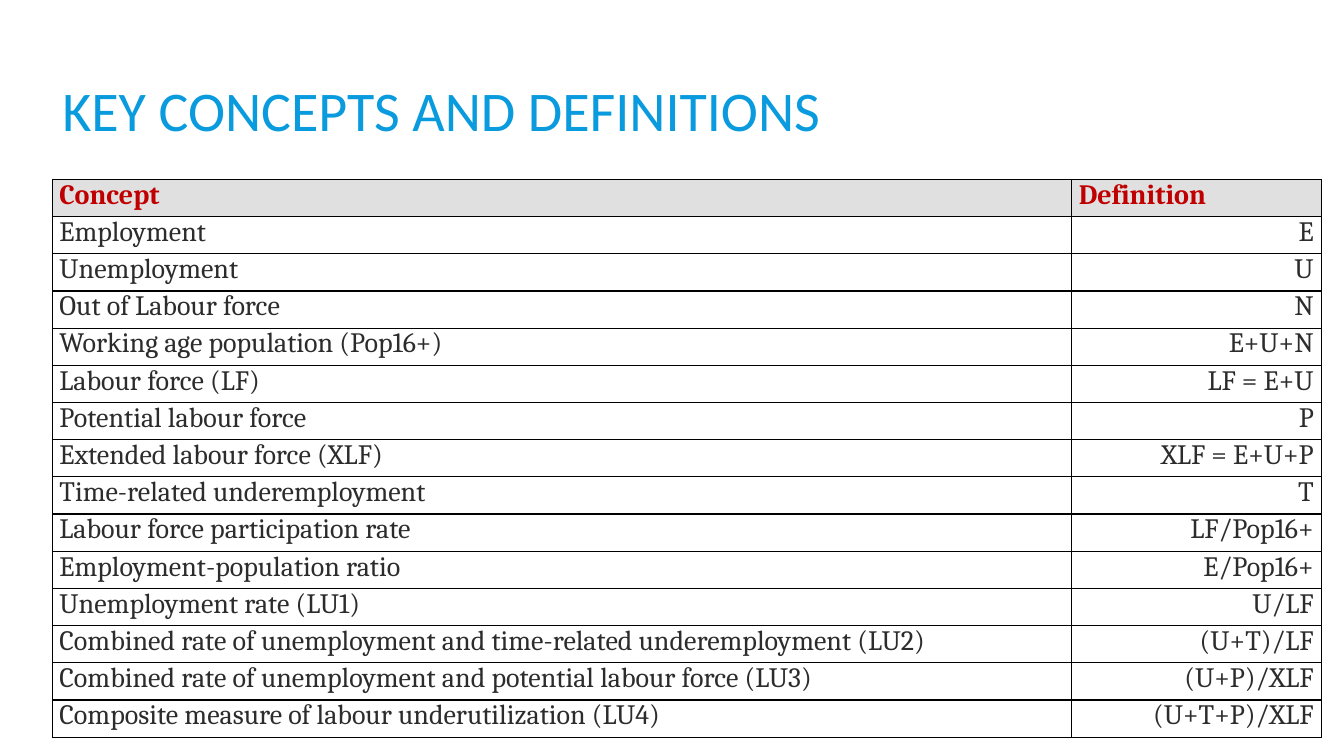
from dataclasses import dataclass

from lxml.etree import SubElement
from pptx import Presentation
from pptx.dml.color import RGBColor
from pptx.enum.text import MSO_ANCHOR, PP_ALIGN
from pptx.oxml.ns import qn
from pptx.util import Inches, Pt


@dataclass(frozen=True)
class Theme:
    heading: str = "099BDD"
    header_text: str = "C00000"
    header_fill: str = "E0E0E0"
    body_text: str = "2C2C2C"
    border: str = "000000"
    heading_font: str = "Calibri"
    table_font: str = "Cambria"
    heading_size: int = 40
    table_size: int = 20
    border_width: int = 1


THEME = Theme()
SLIDE_WIDTH, SLIDE_HEIGHT = Inches(13.33), Inches(7.5)
CONCEPT_SHARE = 0.803

CONCEPTS = [
    ("Concept", "Definition"),
    ("Employment", "E"),
    ("Unemployment", "U"),
    ("Out of Labour force", "N"),
    ("Working age population (Pop16+)", "E+U+N"),
    ("Labour force (LF)", "LF = E+U"),
    ("Potential labour force", "P"),
    ("Extended labour force (XLF)", "XLF = E+U+P"),
    ("Time-related underemployment", "T"),
    ("Labour force participation rate", "LF/Pop16+"),
    ("Employment-population ratio", "E/Pop16+"),
    ("Unemployment rate (LU1)", "U/LF"),
    ("Combined rate of unemployment and time-related underemployment (LU2)", "(U+T)/LF"),
    ("Combined rate of unemployment and potential labour force (LU3)", "(U+P)/XLF"),
    ("Composite measure of labour underutilization (LU4)", "(U+T+P)/XLF"),
]


def percent_box(left, top, width, height):
    return (
        round(SLIDE_WIDTH * left / 100),
        round(SLIDE_HEIGHT * top / 100),
        round(SLIDE_WIDTH * width / 100),
        round(SLIDE_HEIGHT * height / 100),
    )


def write(frame, text, *, font, size, color, bold=False,
          align=PP_ALIGN.LEFT, line_spacing=1.0):
    frame.word_wrap = True
    paragraph = frame.paragraphs[0]
    paragraph.alignment = align
    paragraph.line_spacing = line_spacing
    run = paragraph.add_run()
    run.text = text
    run.font.name = font
    run.font.size = Pt(size)
    run.font.bold = bold
    run.font.color.rgb = RGBColor.from_string(color)


def draw_borders(cell):
    properties = cell._tc.get_or_add_tcPr()
    for side in ("a:lnL", "a:lnR", "a:lnT", "a:lnB"):
        line = SubElement(properties, qn(side), w=str(Pt(THEME.border_width)))
        fill = SubElement(line, qn("a:solidFill"))
        SubElement(fill, qn("a:srgbClr"), val=THEME.border)


def fill_cell(cell, text, is_header, is_definition):
    cell.margin_left = Inches(0.07)
    cell.margin_right = Inches(0.08)
    cell.margin_top = cell.margin_bottom = 0
    draw_borders(cell)
    if is_header:
        cell.fill.solid()
        cell.fill.fore_color.rgb = RGBColor.from_string(THEME.header_fill)
        align = PP_ALIGN.JUSTIFY
    else:
        cell.fill.background()
        align = PP_ALIGN.RIGHT if is_definition else PP_ALIGN.LEFT
    write(cell.text_frame, text, font=THEME.table_font, size=THEME.table_size,
          color=THEME.header_text if is_header else THEME.body_text,
          bold=is_header, align=align, line_spacing=0.96)


def add_heading(slide, box):
    heading = slide.shapes.add_textbox(*box).text_frame
    heading.vertical_anchor = MSO_ANCHOR.MIDDLE
    write(heading, "KEY CONCEPTS AND DEFINITIONS", font=THEME.heading_font,
          size=THEME.heading_size, color=THEME.heading, line_spacing=0.85)


def add_definitions(slide, box):
    definitions = slide.shapes.add_table(len(CONCEPTS), 2, *box).table
    definitions.first_row = definitions.horz_banding = False
    concept_column, definition_column = definitions.columns
    concept_column.width = round(box[2] * CONCEPT_SHARE)
    definition_column.width = box[2] - concept_column.width
    for row, entry in enumerate(CONCEPTS):
        for column, text in enumerate(entry):
            fill_cell(definitions.cell(row, column), text, row == 0, column == 1)


def main():
    deck = Presentation()
    deck.slide_width, deck.slide_height = SLIDE_WIDTH, SLIDE_HEIGHT
    slide = deck.slides.add_slide(deck.slide_layouts[6])
    add_heading(slide, percent_box(3.9, 4.13, 86.25, 22))
    add_definitions(slide, percent_box(3.9, 23.73, 94.45, 73.8))
    deck.save("out.pptx")


if __name__ == "__main__":
    main()
